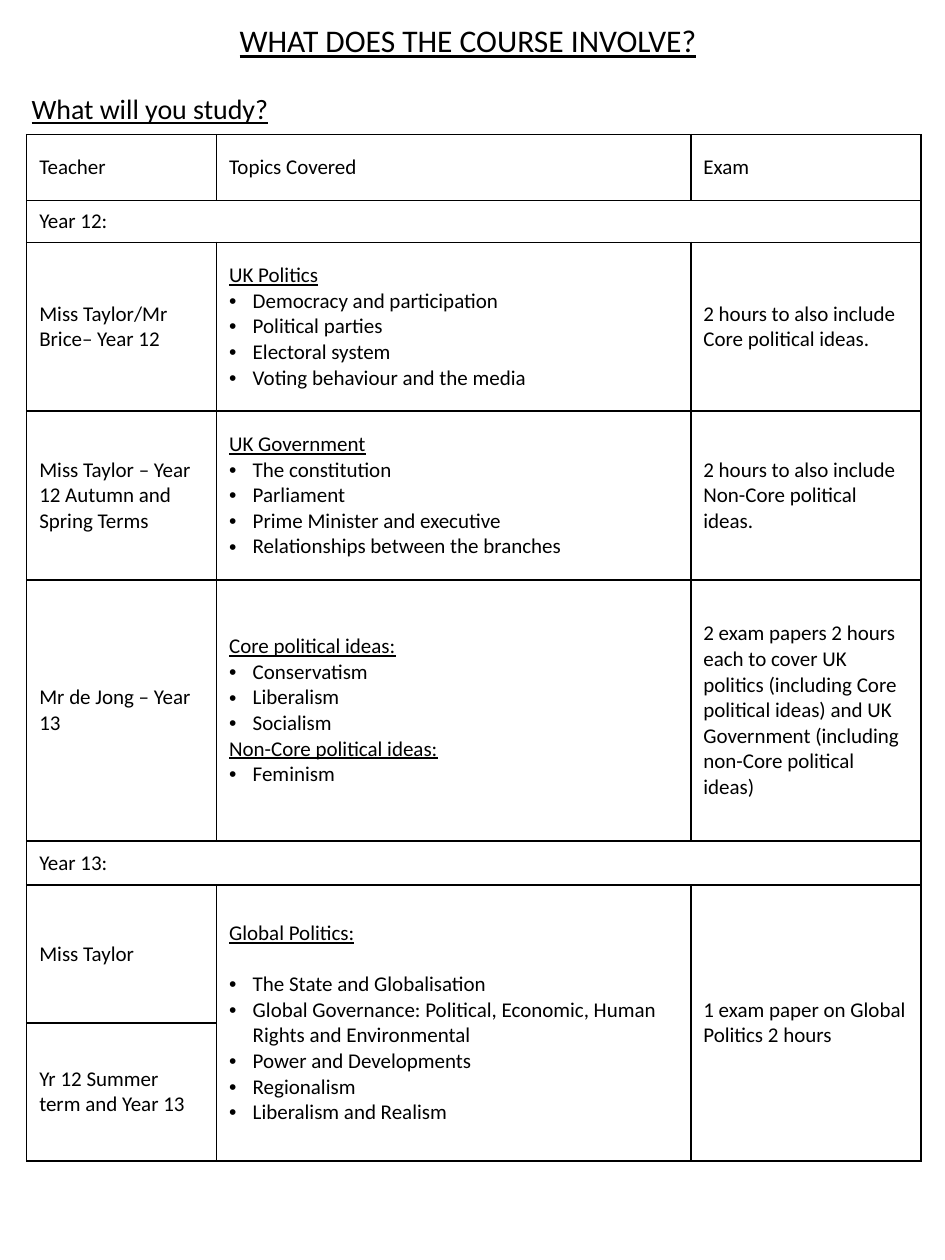
from lxml import etree
from pptx import Presentation
from pptx.dml.color import RGBColor
from pptx.enum.text import MSO_ANCHOR, MSO_AUTO_SIZE, PP_ALIGN
from pptx.oxml.ns import qn
from pptx.util import Pt

MIDDLE, TOP = MSO_ANCHOR.MIDDLE, MSO_ANCHOR.TOP
CENTER, LEFT = PP_ALIGN.CENTER, PP_ALIGN.LEFT
FIXED = MSO_AUTO_SIZE.NONE
INK = "000000"
INDENT = 13.5
COLS = [108.5, 271, 131.5]
HEIGHTS = [37.5, 24, 96.5, 96.5, 149.25, 25, 78.9, 78.9]
MERGES = [(1, 0, 1, 2), (5, 0, 5, 2), (6, 1, 7, 1), (6, 2, 7, 2)]

ROWS = [
    ["Teacher", "Topics Covered", "Exam"],
    ["Year 12:"],
    ["Miss Taylor/Mr Brice– Year 12",
     [("UK Politics", ["Democracy and participation", "Political parties",
                       "Electoral system", "Voting behaviour and the media"])],
     "2 hours to also include Core political ideas."],
    ["Miss Taylor – Year 12 Autumn and Spring Terms",
     [("UK Government", ["The constitution", "Parliament",
                         "Prime Minister and executive",
                         "Relationships between the branches"])],
     "2 hours to also include Non-Core political ideas."],
    ["Mr de Jong – Year 13",
     [("Core political ideas:", ["Conservatism", "Liberalism", "Socialism"]),
      ("Non-Core political ideas:", ["Feminism"])],
     "2 exam papers 2 hours each to cover UK politics (including Core "
     "political ideas) and UK Government (including non-Core political ideas)"],
    ["Year 13:"],
    ["Miss Taylor",
     [("Global Politics:", [
         "The State and Globalisation",
         "Global Governance: Political, Economic, Human Rights and Environmental",
         "Power and Developments", "Regionalism", "Liberalism and Realism"])],
     "1 exam paper on Global Politics 2 hours"],
    ["Yr 12 Summer term and Year 13"],
]


def color(code):
    """Turn a hex string into a colour."""
    return RGBColor.from_string(code)


def style(para, size, line=False):
    """Format every run of a paragraph."""
    for run in para.runs:
        font = run.font
        font.name, font.size = "Calibri", Pt(size)
        font.bold, font.underline = False, line
        font.color.rgb = color(INK)


def bullet(para):
    """Give a paragraph a hanging bullet."""
    props = para._p.get_or_add_pPr()
    props.set("marL", str(Pt(INDENT)))
    props.set("indent", str(-Pt(INDENT)))
    etree.SubElement(props, qn("a:buFont"), typeface="Arial")
    etree.SubElement(props, qn("a:buChar"), char="•")


def border(cell):
    """Draw a thin line on all four sides of a cell."""
    props = cell._tc.get_or_add_tcPr()
    for side in ("lnL", "lnR", "lnT", "lnB"):
        line = etree.SubElement(props, qn("a:" + side), w=str(Pt(1)))
        fill = etree.SubElement(line, qn("a:solidFill"))
        etree.SubElement(fill, qn("a:srgbClr"), val=INK)


def heading(shape, box, text, size, align, anchor):
    """Place an underlined heading in its box."""
    shape.left, shape.top, shape.width, shape.height = map(Pt, box)
    frame = shape.text_frame
    frame.text = text
    frame.word_wrap, frame.auto_size = True, FIXED
    frame.vertical_anchor = anchor
    para = frame.paragraphs[0]
    para.alignment = align
    style(para, size, True)


def topics(frame, groups):
    """Write underlined subjects, each with its bulleted topics."""
    lines = [(text, text == name) for name, items in groups
             for text in [name, *items]]
    frame.text = "\n".join(text for text, _ in lines)
    for para, (_, head) in zip(frame.paragraphs, lines):
        style(para, 12, head)
        if not head:
            bullet(para)


def course(slide, box):
    """Build the course table in its box."""
    table = slide.shapes.add_table(len(ROWS), len(COLS), *map(Pt, box)).table
    table.first_row = table.horz_banding = False
    for col, width in zip(table.columns, COLS):
        col.width = Pt(width)
    for row, height in zip(table.rows, HEIGHTS):
        row.height = Pt(height)
    for top, left, low, right in MERGES:
        table.cell(top, left).merge(table.cell(low, right))
    for cell in table.iter_cells():
        border(cell)
        cell.fill.background()
        cell.vertical_anchor = MIDDLE
    for i, row in enumerate(ROWS):
        for j, item in enumerate(row):
            frame = table.cell(i, j).text_frame
            if isinstance(item, str):
                frame.text = item
                style(frame.paragraphs[0], 12)
            else:
                topics(frame, item)
    table.cell(6, 1).text_frame.paragraphs[0].space_after = Pt(14.6)


def main():
    """Build and save the slide."""
    deck = Presentation()
    deck.slide_width, deck.slide_height = Pt(540), Pt(720)
    slide = deck.slides.add_slide(deck.slide_layouts[5])
    heading(slide.shapes.title, (9.5, 8.5, 516, 29),
            "WHAT DOES THE COURSE INVOLVE?", 18, CENTER, MIDDLE)
    box = (11, 49, 520, 27)
    study = slide.shapes.add_textbox(*map(Pt, box))
    heading(study, box, "What will you study?", 16, LEFT, TOP)
    course(slide, (15.25, 77, sum(COLS), sum(HEIGHTS)))
    deck.save("out.pptx")


if __name__ == "__main__":
    main()
